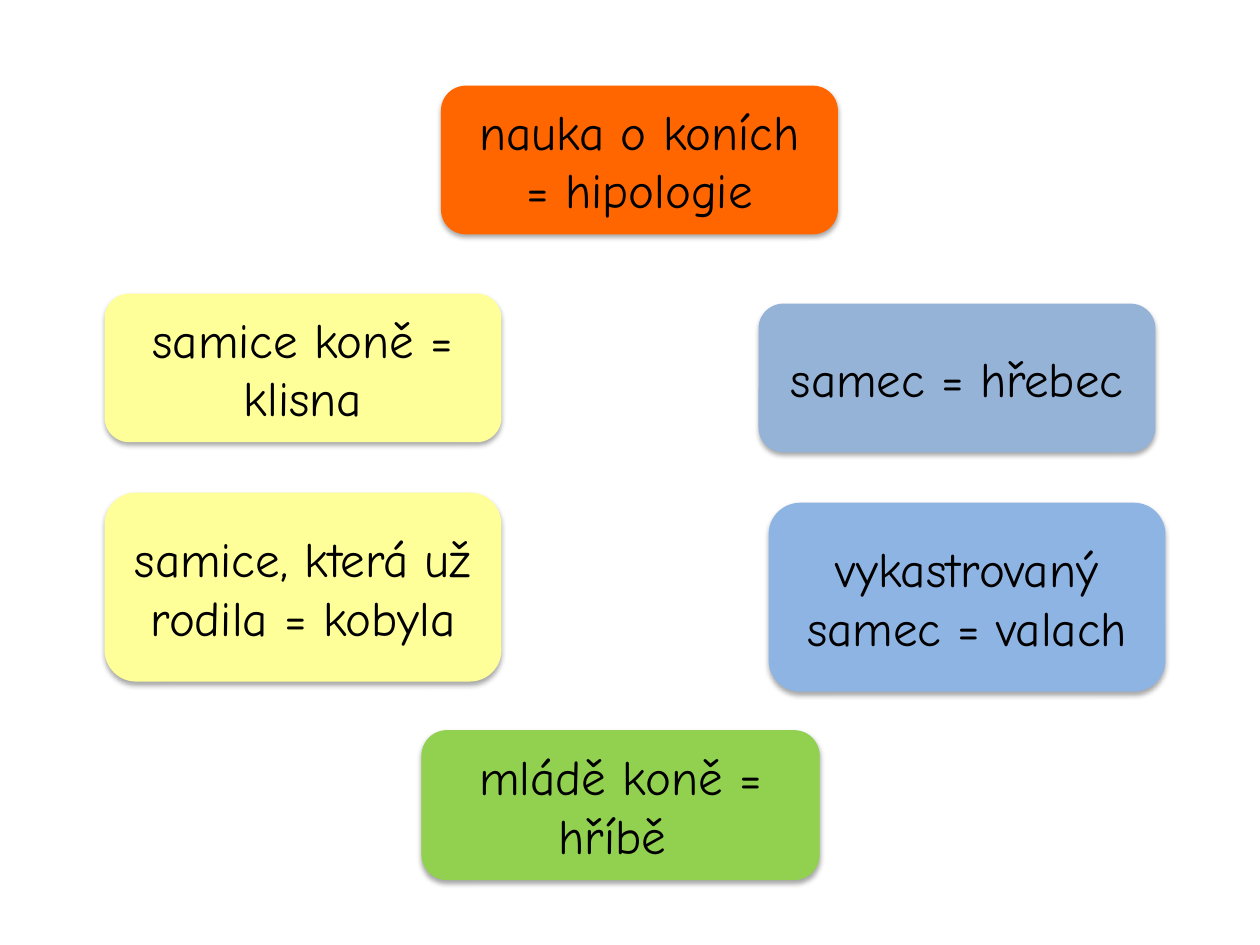
from lxml.etree import SubElement
from pptx import Presentation
from pptx.dml.color import RGBColor
from pptx.enum.shapes import MSO_SHAPE
from pptx.enum.text import MSO_ANCHOR, PP_ALIGN
from pptx.oxml.ns import qn
from pptx.util import Inches, Pt

COLORS = {
    "science": "FF6600",
    "female": "FFFF99",
    "male": "95B3D7",
    "gelding": "8EB4E3",
    "foal": "92D050",
    "text": "000000",
    "shadow": "000000",
}
FONT = "Comic Neue"
CARD_WIDTH = 3.15
SHORT, TALL = 1.18, 1.5

# Term, colour, left, top, height
TERMS = [
    ("samice, která už rodila = kobyla", "female", 0.83, 3.91, TALL),
    ("samice koně = klisna", "female", 0.83, 2.33, SHORT),
    ("vykastrovaný samec = valach", "gelding", 6.1, 3.99, TALL),
    ("samec = hřebec", "male", 6.02, 2.41, SHORT),
    ("mládě koně = hříbě ", "foal", 3.35, 5.8, SHORT),
    ("nauka o koních = hipologie", "science", 3.5, 0.68, SHORT),
]


def rgb(name):
    return RGBColor.from_string(COLORS[name])


def add_soft_shadow(card):
    """Drop a faint shadow straight below the card."""
    card.shadow.inherit = False
    effects = card.element.spPr.find(qn("a:effectLst"))
    shadow = SubElement(effects, qn("a:outerShdw"), blurRad=str(Pt(3.1)),
                        dist=str(Pt(1.8)), dir="5400000", rotWithShape="0")
    color = SubElement(shadow, qn("a:srgbClr"), val=COLORS["shadow"])
    SubElement(color, qn("a:alpha"), val="35000")


def add_term_card(slide, term, color, left, top, height):
    card = slide.shapes.add_shape(
        MSO_SHAPE.ROUNDED_RECTANGLE, Inches(left), Inches(top),
        Inches(CARD_WIDTH), Inches(height))
    card.fill.solid()
    card.fill.fore_color.rgb = rgb(color)
    card.line.fill.background()
    add_soft_shadow(card)

    frame = card.text_frame
    frame.word_wrap = True
    frame.vertical_anchor = MSO_ANCHOR.MIDDLE
    label = frame.paragraphs[0]
    label.text = term
    label.alignment = PP_ALIGN.CENTER
    label.font.name = FONT
    label.font.size = Pt(28)
    label.font.color.rgb = rgb("text")
    return card


def main():
    deck = Presentation()
    deck.slide_width, deck.slide_height = Inches(10), Inches(7.5)
    slide = deck.slides.add_slide(deck.slide_layouts[6])

    # Vocabulary cards; only the foal has an outline
    for term, color, left, top, height in TERMS:
        card = add_term_card(slide, term, color, left, top, height)
        if color == "foal":
            card.line.color.rgb = rgb(color)
            card.line.width = Pt(0.75)

    deck.save("out.pptx")


if __name__ == "__main__":
    main()
